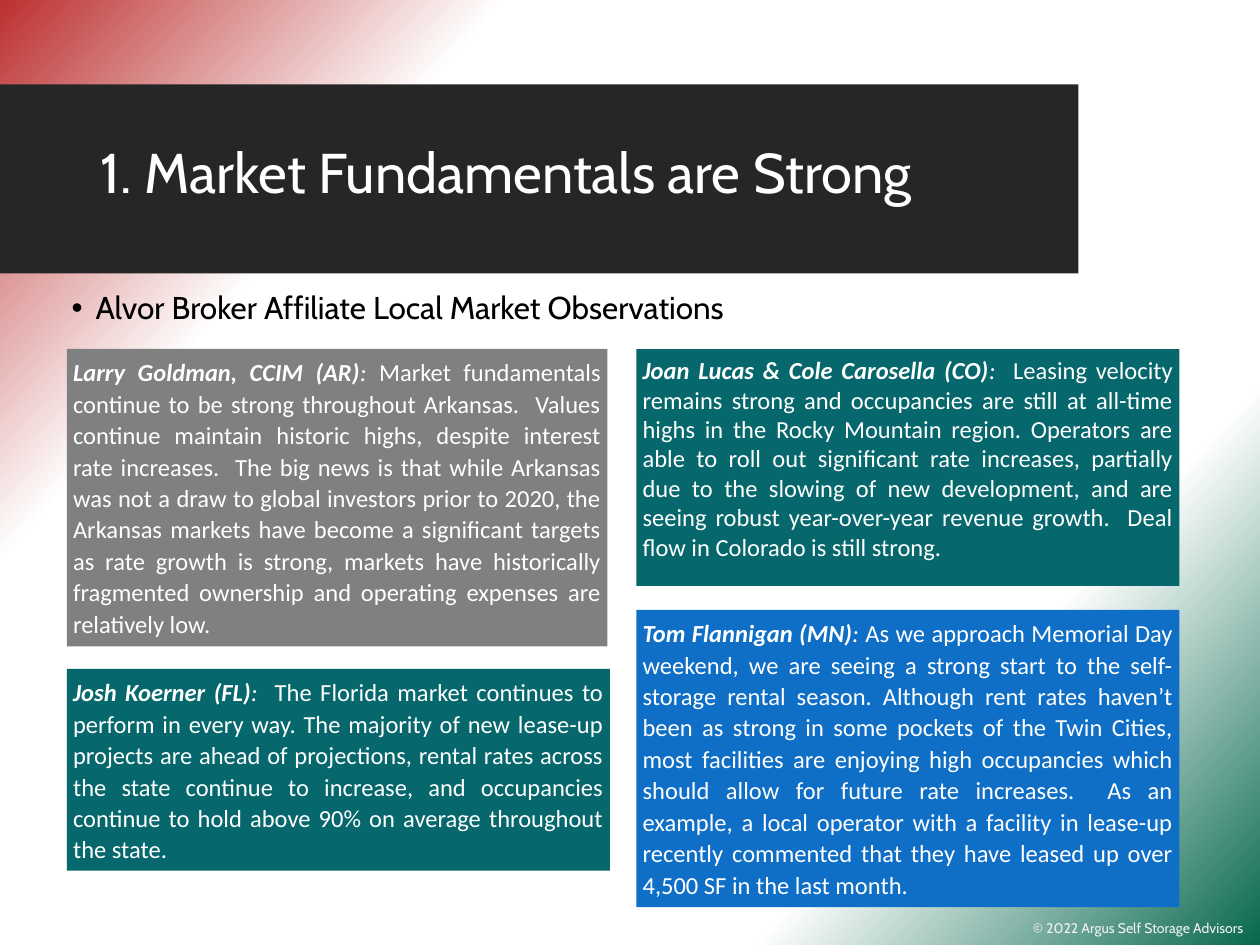
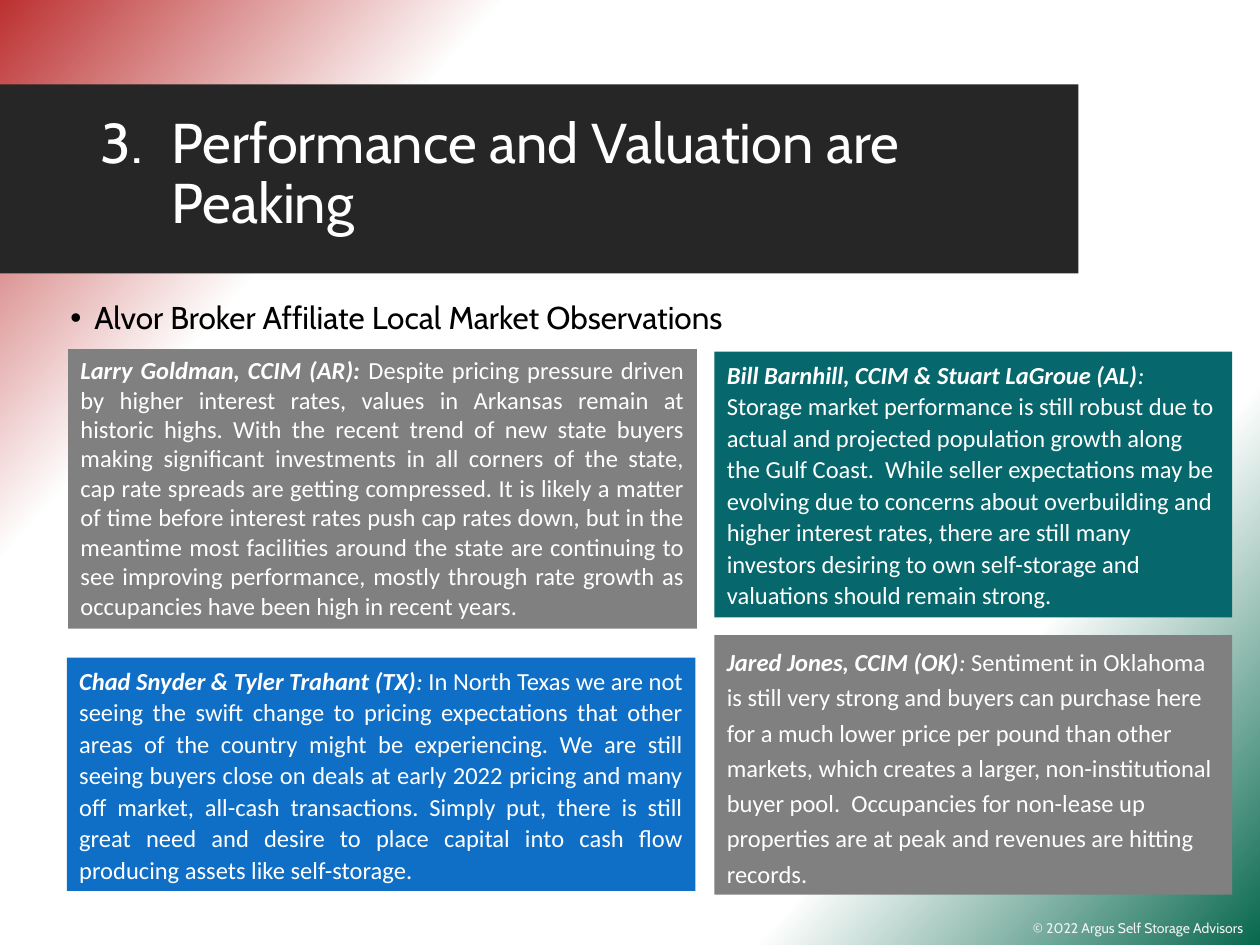
from dataclasses import dataclass

from lxml.etree import SubElement
from pptx import Presentation
from pptx.dml.color import RGBColor
from pptx.enum.shapes import MSO_SHAPE
from pptx.enum.text import MSO_ANCHOR, PP_ALIGN
from pptx.oxml.ns import qn
from pptx.util import Inches, Pt


@dataclass(frozen=True)
class Theme:
    heading_font: str = "Cabin"
    card_font: str = "Calibri"
    title_size: int = 32
    bullet_size: int = 18
    card_size: int = 14
    footer_size: int = 8
    band: str = "262626"
    white: str = "FFFFFF"
    black: str = "000000"
    footer: str = "F2F2F2"
    gray: str = "808080"
    teal: str = "06686C"
    blue: str = "0F6FC6"
    background: tuple = ((0, "BC3131"), (24, "FFFFFF"), (76, "FFFFFF"), (100, "08684E"))
    background_angle: int = 42


theme = Theme()
JUSTIFY, LEFT = PP_ALIGN.JUSTIFY, PP_ALIGN.LEFT


def add_run(paragraph, text, font, size, color, bold=False, italic=False):
    run = paragraph.add_run()
    run.text = text
    run.font.name = font
    run.font.size = Pt(size)
    run.font.color.rgb = RGBColor.from_string(color)
    run.font.bold = bold
    run.font.italic = italic


def add_box(slide, position, fill=None):
    """Add a text box, or a filled rectangle, and return its text frame."""
    lengths = [Inches(value) for value in position]
    if fill is None:
        shape = slide.shapes.add_textbox(*lengths)
    else:
        shape = slide.shapes.add_shape(MSO_SHAPE.RECTANGLE, *lengths)
        shape.shadow.inherit = False
        shape.fill.solid()
        shape.fill.fore_color.rgb = RGBColor.from_string(fill)
        shape.line.fill.background()
    frame = shape.text_frame
    frame.word_wrap = True
    frame.vertical_anchor = MSO_ANCHOR.TOP
    return frame


# Each card: position, fill, alignment, line spacing, space after, name, colon, text
pages = [
    {
        "title": ["1. Market Fundamentals are Strong"],
        "hanging": 0,
        "bullet_at": (0.47, 2.21),
        "card_inset": 0.05,
        "cards": [
            ((0.53, 2.77, 4.29, 2.36), theme.gray, JUSTIFY, 1.07, 8,
             "Larry Goldman, CCIM (AR)", ":",
             " Market fundamentals continue to be strong throughout Arkansas.  Values "
             "continue maintain historic highs, despite interest rate increases.  The big "
             "news is that while Arkansas was not a draw to global investors prior to 2020, "
             "the Arkansas markets have become a significant targets as rate growth is "
             "strong, markets have historically fragmented ownership and operating expenses "
             "are relatively low."),
            ((0.53, 5.31, 4.31, 1.6), theme.teal, JUSTIFY, 1.07, 8,
             "Josh Koerner (FL)", ":",
             "  The Florida market continues to perform in every way. The majority of new "
             "lease-up projects are ahead of projections, rental rates across the state "
             "continue to increase, and occupancies continue to hold above 90% on average "
             "throughout the state."),
            ((5.05, 2.77, 4.31, 1.88), theme.teal, JUSTIFY, 1.0, 8,
             "Joan Lucas & Cole Carosella (CO)", ":",
             "  Leasing velocity remains strong and occupancies are still at all-time highs "
             "in the Rocky Mountain region. Operators are able to roll out significant rate "
             "increases, partially due to the slowing of new development, and are seeing "
             "robust year-over-year revenue growth.  Deal flow in Colorado is still strong."),
            ((5.05, 4.84, 4.31, 2.36), theme.blue, JUSTIFY, 1.07, 8,
             "Tom Flannigan (MN)", ":",
             " As we approach Memorial Day weekend, we are seeing a strong start to the "
             "self-storage rental season. Although rent rates haven’t been as strong in some "
             "pockets of the Twin Cities, most facilities are enjoying high occupancies which "
             "should allow for future rate increases.  As an example, a local operator with a "
             "facility in lease-up recently commented that they have leased up over 4,500 SF "
             "in the last month."),
        ],
    },
    {
        "title": ["3.\tPerformance and Valuation are", "Peaking"],
        "hanging": 0.56,
        "bullet_at": (0.46, 2.29),
        "card_inset": 0.1,
        "cards": [
            ((0.54, 2.77, 4.99, 2.22), theme.gray, JUSTIFY, 1.0, 8,
             "Larry Goldman, CCIM (AR):", "",
             " Despite pricing pressure driven by higher interest rates, values in Arkansas "
             "remain at historic highs. With the recent trend of new state buyers making "
             "significant investments in all corners of the state, cap rate spreads are "
             "getting compressed. It is likely a matter of time before interest rates push "
             "cap rates down, but in the meantime most facilities around the state are "
             "continuing to see improving performance, mostly through rate growth as "
             "occupancies have been high in recent years."),
            ((0.53, 5.22, 4.99, 1.85), theme.blue, JUSTIFY, 1.07, 8,
             "Chad Snyder & Tyler Trahant (TX)", ":",
             " In North Texas we are not seeing the swift change to pricing expectations that "
             "other areas of the country might be experiencing. We are still seeing buyers "
             "close on deals at early 2022 pricing and many off market, all-cash transactions. "
             "Simply put, there is still great need and desire to place capital into cash flow "
             "producing assets like self-storage."),
            ((5.67, 2.79, 4.11, 2.11), theme.teal, LEFT, 1.07, 8,
             "Bill Barnhill, CCIM & Stuart LaGroue (AL)", ":",
             " Storage market performance is still robust due to actual and projected "
             "population growth along the Gulf Coast.  While seller expectations may be "
             "evolving due to concerns about overbuilding and higher interest rates, there are "
             "still many investors desiring to own self-storage and valuations should remain "
             "strong."),
            ((5.67, 5.04, 4.11, 2.06), theme.gray, LEFT, 1.2, 0,
             "Jared Jones, CCIM (OK)", ":",
             " Sentiment in Oklahoma is still very strong and buyers can purchase here for a "
             "much lower price per pound than other markets, which creates a larger, "
             "non-institutional buyer pool.  Occupancies for non-lease up properties are at "
             "peak and revenues are hitting records."),
        ],
    },
]

presentation = Presentation()
presentation.slide_width = Inches(10)
presentation.slide_height = Inches(7.5)

for page in pages:
    slide = presentation.slides.add_slide(presentation.slide_layouts[6])

    # Diagonal background gradient
    background = slide.background.fill
    background.gradient()
    background.gradient_angle = 360 - theme.background_angle
    stops = next(slide.element.iter(qn("a:gsLst")))
    for stop in list(stops):
        stops.remove(stop)
    for percent, color in theme.background:
        stop = SubElement(stops, qn("a:gs"), pos=str(percent * 1000))
        SubElement(stop, qn("a:srgbClr"), val=color)

    # Title band and footer
    add_box(slide, (0, 0.67, 8.56, 1.5), theme.band)
    footer = add_box(slide, (8.1, 7.25, 2, 0.24)).paragraphs[0]
    add_run(footer, "© 2022 Argus Self Storage Advisors",
            theme.heading_font, theme.footer_size, theme.footer)

    # Title
    frame = add_box(slide, (0.7, 0.8, 7.89, 1.18))
    frame.vertical_anchor = MSO_ANCHOR.MIDDLE
    paragraph = frame.paragraphs[0]
    paragraph.line_spacing = 0.9
    properties = paragraph._p.get_or_add_pPr()
    properties.set("marL", str(Inches(page["hanging"])))
    properties.set("indent", str(-Inches(page["hanging"])))
    for index, line in enumerate(page["title"]):
        if index:
            paragraph.add_line_break()
        add_run(paragraph, line, theme.heading_font, theme.title_size, theme.white)

    # Bullet line
    paragraph = add_box(slide, (*page["bullet_at"], 9.17, 0.56)).paragraphs[0]
    paragraph.line_spacing = 1.1
    paragraph.space_after = Pt(6)
    properties = paragraph._p.get_or_add_pPr()
    properties.set("marL", str(Inches(0.19)))
    properties.set("indent", str(-Inches(0.19)))
    SubElement(properties, qn("a:buFont"), typeface="Arial")
    SubElement(properties, qn("a:buChar"), char="•")
    add_run(paragraph, "Alvor Broker Affiliate Local Market Observations",
            theme.heading_font, theme.bullet_size, theme.black)

    # Broker observation cards
    for position, fill, alignment, spacing, after, name, colon, text in page["cards"]:
        frame = add_box(slide, position, fill)
        frame.margin_left = frame.margin_right = Inches(page["card_inset"])
        frame.margin_top = frame.margin_bottom = Inches(0.05)
        paragraph = frame.paragraphs[0]
        paragraph.alignment = alignment
        paragraph.line_spacing = spacing
        paragraph.space_after = Pt(after)
        style = (theme.card_font, theme.card_size, theme.white)
        add_run(paragraph, name, *style, bold=True, italic=True)
        if colon:
            add_run(paragraph, colon, *style, italic=True)
        add_run(paragraph, text, *style)

presentation.save("out.pptx")
